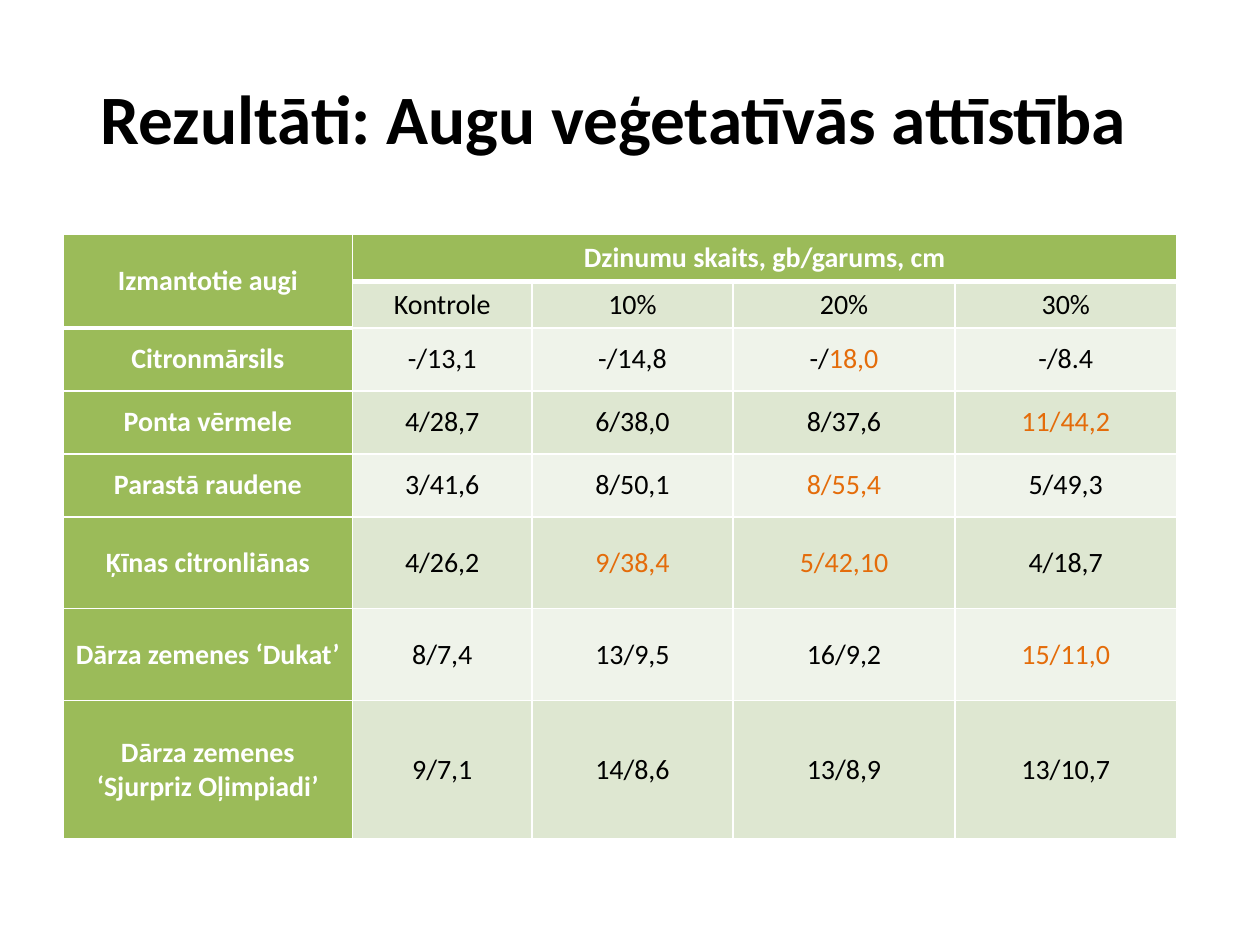
"""Build a slide with a table of vegetative plant growth results."""
from lxml.etree import SubElement
from pptx import Presentation
from pptx.dml.color import RGBColor
from pptx.enum.text import MSO_ANCHOR, PP_ALIGN
from pptx.oxml.ns import qn
from pptx.util import Cm, Pt

BLACK = RGBColor(0x00, 0x00, 0x00)
WHITE = RGBColor(0xFF, 0xFF, 0xFF)
ORANGE = RGBColor(0xE4, 0x6C, 0x0A)
GREEN = RGBColor(0x9B, 0xBB, 0x59)
BAND_DARK = RGBColor(0xDE, 0xE7, 0xD1)
BAND_LIGHT = RGBColor(0xEF, 0xF3, 0xEA)

COLS = [5.84, 3.61, 4.06, 4.47, 4.47]
HEIGHTS = [0.94, 0.94, 1.27, 1.27, 1.27, 1.85, 1.85, 2.79]
MARK = "*"
ROWS = [
    ["Izmantotie augi", "Dzinumu skaits, gb/garums, cm", "", "", ""],
    ["", "Kontrole", "10%", "20%", "30%"],
    ["Citronmārsils", "-/13,1", "-/14,8", "-/*18,0", "-/8.4"],
    ["Ponta vērmele", "4/28,7", "6/38,0", "8/37,6", "*11/44,2"],
    ["Parastā raudene", "3/41,6", "8/50,1", "*8/55,4", "5/49,3"],
    ["Ķīnas citronliānas", "4/26,2", "*9/38,4", "*5/42,10", "4/18,7"],
    ["Dārza zemenes ‘Dukat’", "8/7,4", "13/9,5", "16/9,2", "*15/11,0"],
    ["Dārza zemenes ‘Sjurpriz Oļimpiadi’", "9/7,1", "14/8,6", "13/8,9", "13/10,7"],
]


def add_run(p, text, size, color, bold):
    r = p.add_run()
    r.text = text
    r.font.name = "Calibri"
    r.font.size = Pt(size)
    r.font.bold = bold
    r.font.color.rgb = color


def add_border(cell, side, width):
    ln = SubElement(cell._tc.get_or_add_tcPr(), qn(f"a:ln{side}"), w=str(Pt(width)))
    fill = SubElement(ln, qn("a:solidFill"))
    SubElement(fill, qn("a:srgbClr"), val=str(WHITE))


prs = Presentation()
prs.slide_width, prs.slide_height = Cm(25.4), Cm(19.05)
s = prs.slides.add_slide(prs.slide_layouts[6])

title = s.shapes.add_textbox(Cm(1.27), Cm(0.76), Cm(22.86), Cm(3.18))
tf = title.text_frame
tf.word_wrap = True
tf.vertical_anchor = MSO_ANCHOR.MIDDLE
tf.margin_right = Cm(0.91)
p = tf.paragraphs[0]
p.alignment = PP_ALIGN.CENTER
add_run(p, "Rezultāti: Augu veģetatīvās attīstība", 39.6, BLACK, True)

table = s.shapes.add_table(
    len(ROWS), len(COLS), Cm(1.27), Cm(4.73), Cm(sum(COLS)), Cm(sum(HEIGHTS))
).table
for col, width in zip(table.columns, COLS):
    col.width = Cm(width)
for row, height in zip(table.rows, HEIGHTS):
    row.height = Cm(height)
table.cell(0, 0).merge(table.cell(1, 0))
table.cell(0, 1).merge(table.cell(0, 4))

for i, row in enumerate(ROWS):
    for j, text in enumerate(row):
        cell = table.cell(i, j)
        header = i == 0 or j == 0
        head_end = 1 if j == 0 else 0
        add_border(cell, "L", 1)
        add_border(cell, "R", 1)
        add_border(cell, "T", 3 if i == head_end + 1 else 1)
        add_border(cell, "B", 3 if i <= head_end else 1)
        cell.fill.solid()
        band = BAND_DARK if i % 2 else BAND_LIGHT
        cell.fill.fore_color.rgb = GREEN if header else band
        cell.vertical_anchor = MSO_ANCHOR.MIDDLE
        cell.margin_left = cell.margin_right = Cm(0.18)
        cell.margin_top = cell.margin_bottom = 0
        p = cell.text_frame.paragraphs[0]
        p.alignment = PP_ALIGN.CENTER
        plain, _, best = text.partition(MARK)
        if plain:
            add_run(p, plain, 16, WHITE if header else BLACK, header)
        if best:
            add_run(p, best, 16, ORANGE, False)

prs.save("out.pptx")
